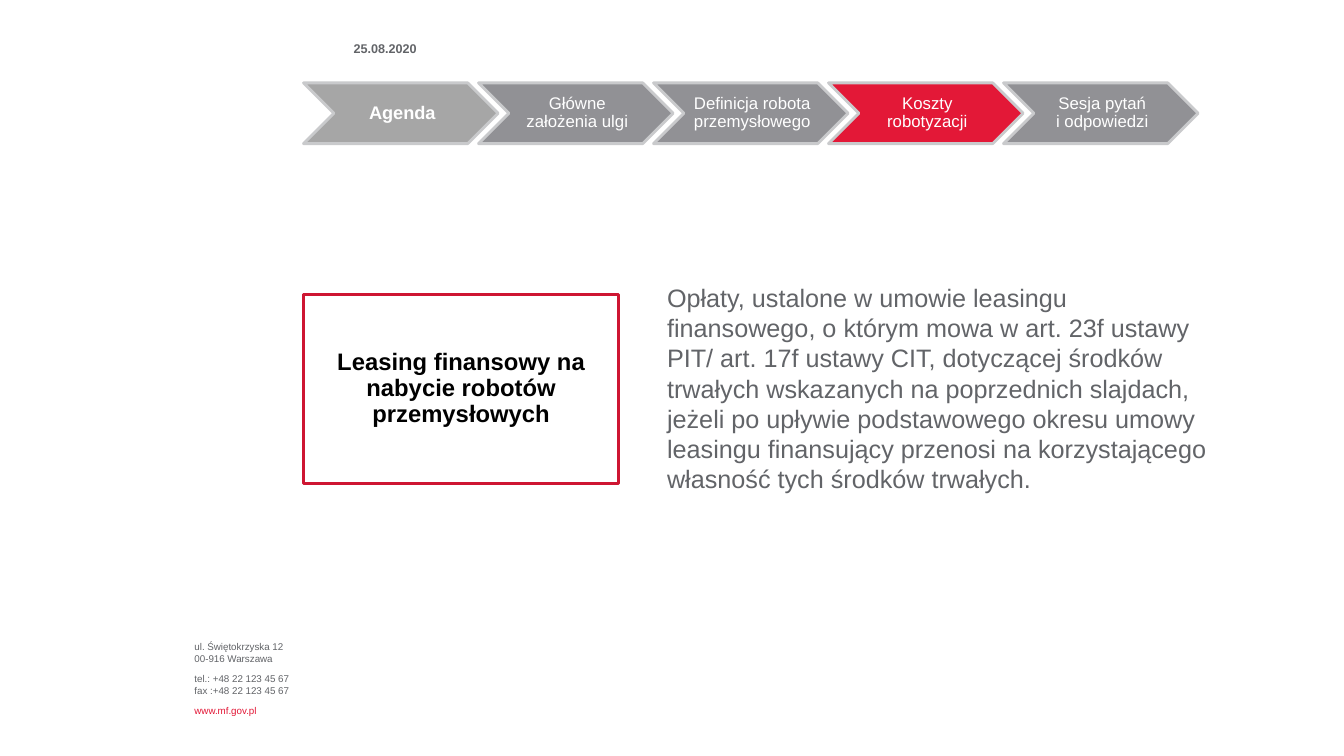
from copy import deepcopy

from pptx import Presentation
from pptx.dml.color import RGBColor
from pptx.enum.shapes import MSO_SHAPE
from pptx.enum.text import MSO_ANCHOR, PP_ALIGN
from pptx.oxml.ns import qn
from pptx.util import Pt

HUES = {
    "text": "626468", "red": "E31837", "frame": "CE1632", "light": "A6A6A6",
    "grey": "919195", "edge": "C9CACC", "white": "FFFFFF", "black": "000000",
}


class Deck:
    """Holds the style and the current slide."""

    face = "Arial"

    def __init__(self, wide, high):
        self.prs = Presentation()
        self.prs.slide_width, self.prs.slide_height = Pt(wide), Pt(high)
        self.slide = self.prs.slides.add_slide(self.prs.slide_layouts[6])

    def hue(self, name):
        return RGBColor.from_string(HUES[name])

    def put(self, item, form):
        for key, value in form.items():
            setattr(item, key, value)

    def label(self, par, text, size, hue, bold=False, **form):
        par.text = text
        self.put(par, form)
        for run in par.runs:
            self.put(run.font, {"name": self.face, "size": Pt(size), "bold": bold})
            run.font.color.rgb = self.hue(hue)
        # Line breaks take the same size as the words around them
        for mark in par._p.findall(qn("a:br")):
            mark.append(deepcopy(par.runs[0]._r.rPr))

    def text(self, box, lines, size):
        """Adds a text box; each line is (text, colour, bold, space before)."""
        frame = self.slide.shapes.add_textbox(*map(Pt, box)).text_frame
        frame.word_wrap = True
        for i, (text, hue, bold, gap) in enumerate(lines):
            par = frame.add_paragraph() if i else frame.paragraphs[0]
            self.label(par, text, size, hue, bold, space_before=Pt(gap))

    def shape(self, kind, box, fill, edge, pads, text, size, hue, bold):
        """Adds a filled or hollow shape with a centred label."""
        item = self.slide.shapes.add_shape(kind, *map(Pt, box))
        item.shadow.inherit = False
        if fill:
            item.fill.solid()
            item.fill.fore_color.rgb = self.hue(fill)
        else:
            item.fill.background()
        item.line.color.rgb = self.hue(edge)
        item.line.width = Pt(2)
        sides = ("margin_left", "margin_top", "margin_right", "margin_bottom")
        self.put(item.text_frame, dict(zip(sides, map(Pt, pads))))
        self.put(item.text_frame, {"word_wrap": True, "vertical_anchor": MSO_ANCHOR.MIDDLE})
        self.label(item.text_frame.paragraphs[0], text, size, hue, bold,
                   alignment=PP_ALIGN.CENTER, line_spacing=0.9)


def main():
    deck = Deck(960, 540)
    left = 216.8

    # Address block
    deck.text((131.8, 454.3, 85, 62), [
        ("ul. Świętokrzyska 12", "text", False, 0),
        ("00-916 Warszawa", "text", False, 0),
        ("tel.: +48 22 123 45 67", "text", False, 5.8),
        ("fax :+48 22 123 45 67", "text", False, 0),
        ("www.mf.gov.pl", "red", False, 5.8),
    ], 7)

    # Agenda chevrons
    steps = [
        ("Agenda", "light", 13, True),
        ("Główne założenia ulgi", "grey", 12, False),
        ("Definicja robota przemysłowego", "grey", 12, False),
        ("Koszty robotyzacji", "red", 12, False),
        ("Sesja pytań\vi odpowiedzi", "grey", 12, False),
    ]
    for i, (text, fill, size, bold) in enumerate(steps):
        deck.shape(MSO_SHAPE.CHEVRON, (left + i * 125, 59.2, 139, 43.4), fill, "edge",
                   (3.6, 1.4, 1.4, 1.4), text, size, "white", bold)

    # Explanation
    deck.text((469.4, 198, 406.8, 160), [(
        "Opłaty, ustalone w umowie leasingu finansowego, o którym mowa w art. 23f "
        "ustawy PIT/ art. 17f ustawy CIT, dotyczącej środków trwałych wskazanych na "
        "poprzednich slajdach, jeżeli po upływie podstawowego okresu umowy leasingu "
        "finansujący przenosi na korzystającego własność tych środków trwałych.",
        "text", False, 0)], 18)

    # Framed topic
    deck.shape(MSO_SHAPE.RECTANGLE, (left, 210.2, 225.2, 135.3), None, "frame", [5] * 4,
               "Leasing finansowy na nabycie robotów przemysłowych", 17, "black", True)

    # Date
    deck.text((245.5, 26, 61.2, 18), [("25.08.2020", "text", True, 0)], 9)

    deck.prs.save("out.pptx")


if __name__ == "__main__":
    main()
